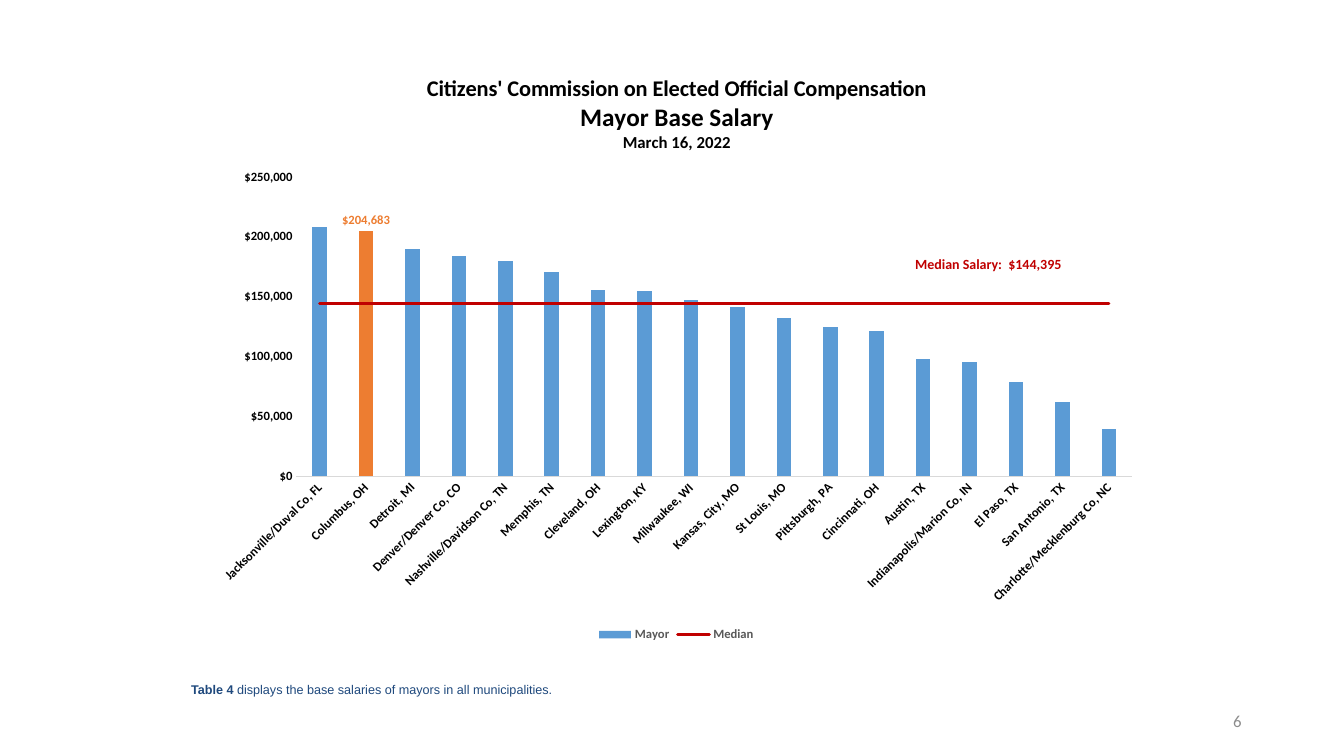
from lxml.etree import SubElement
from pptx import Presentation
from pptx.chart.data import CategoryChartData
from pptx.dml.color import RGBColor
from pptx.enum.chart import (XL_CHART_TYPE, XL_LABEL_POSITION, XL_LEGEND_POSITION,
                             XL_MARKER_STYLE, XL_TICK_MARK)
from pptx.enum.shapes import MSO_SHAPE
from pptx.enum.text import MSO_ANCHOR, PP_ALIGN
from pptx.oxml import parse_xml
from pptx.oxml.ns import nsdecls, qn
from pptx.util import Pt

SALARIES = {
    "Jacksonville/Duval Co, FL": 208393,
    "Columbus, OH": 204683,
    "Detroit, MI": 189300,
    "Denver/Denver Co, CO": 184165,
    "Nashville/Davidson Co, TN": 180000,
    "Memphis, TN": 170817,
    "Cleveland, OH": 155552,
    "Lexington, KY": 154785,
    "Milwaukee, WI": 147336,
    "Kansas, City, MO": 141455,
    "St Louis, MO": 131820,
    "Pittsburgh, PA": 124658,
    "Cincinnati, OH": 121291,
    "Austin, TX": 97656,
    "Indianapolis/Marion Co, IN": 95000,
    "El Paso, TX": 78750,
    "San Antonio, TX": 61725,
    "Charlotte/Mecklenburg Co, NC": 39646,
}
MEDIAN = 144000
HEADINGS = [("Citizens' Commission on Elected Official Compensation", 16),
            ("Mayor Base Salary", 18), ("March 16, 2022", 12)]
CHART_WIDTH, CHART_HEIGHT = 676.8, 423.4
DOLLARS = '"$"#,##0'
WHITE, BLACK, GREY, SILVER = "FFFFFF", "000000", "595959", "D9D9D9"
BLUE, ORANGE, RED, NAVY = "5B9BD5", "ED7D31", "C00000", "1F497D"


def rgb(value):
    return RGBColor.from_string(value)


def place(element, **lengths):
    for old in element.findall(qn("c:layout")):
        element.remove(old)
    layout = parse_xml(f'<c:layout {nsdecls("c")}><c:manualLayout/></c:layout>')
    manual = layout[0]
    if "w" in lengths:
        SubElement(manual, qn("c:layoutTarget")).set("val", "inner")
    for side in "xy":
        SubElement(manual, qn(f"c:{side}Mode")).set("val", "edge")
    for side, length in lengths.items():
        whole = CHART_WIDTH if side in "xw" else CHART_HEIGHT
        SubElement(manual, qn(f"c:{side}")).set("val", str(length / whole))
    return layout


class SalarySlide:
    face = "Calibri"

    def __init__(self, slide):
        self.slide = slide

    def style(self, font, size, color, bold=True, face=None):
        font.name = face or self.face
        font.size = Pt(size)
        font.bold = bold
        font.color.rgb = rgb(color)

    def page_number(self, number, left, top, width, height):
        frame = self.slide.shapes.add_textbox(
            Pt(left), Pt(top), Pt(width), Pt(height)).text_frame
        frame.word_wrap = True
        frame.vertical_anchor = MSO_ANCHOR.MIDDLE
        line = frame.paragraphs[0]
        line.text = number
        line.alignment = PP_ALIGN.RIGHT
        self.style(line.font, 12, "8C8C8C", False)

    def panel(self, parts, left, top, width, height, size, color, face=None, inset=None):
        panel = self.slide.shapes.add_shape(
            MSO_SHAPE.RECTANGLE, Pt(left), Pt(top), Pt(width), Pt(height))
        panel.shadow.inherit = False
        panel.fill.solid()
        panel.fill.fore_color.rgb = rgb(WHITE)
        panel.line.fill.background()
        frame = panel.text_frame
        frame.word_wrap = True
        frame.vertical_anchor = MSO_ANCHOR.TOP
        if inset is not None:
            frame.margin_left = frame.margin_right = Pt(inset)
            frame.margin_top = frame.margin_bottom = Pt(inset)
        line = frame.paragraphs[0]
        line.alignment = PP_ALIGN.LEFT
        self.style(line.font, size, color, parts[0][1], face)
        for words, bold in parts:
            run = line.add_run()
            run.text = words
            if bold != parts[0][1]:
                run.font.bold = bold

    def salary_chart(self, left, top):
        data = CategoryChartData(number_format=DOLLARS)
        data.categories = SALARIES
        data.add_series("Mayor", SALARIES.values())
        data.add_series("Median", [MEDIAN] * len(SALARIES))
        chart = self.slide.shapes.add_chart(
            XL_CHART_TYPE.COLUMN_CLUSTERED, Pt(left), Pt(top),
            Pt(CHART_WIDTH), Pt(CHART_HEIGHT), data).chart
        self.style(chart.font, 10, BLACK, False)
        self.headings(chart)
        self.axes(chart)
        self.bars(chart.plots[0])
        self.median_line(chart)
        chart.has_legend = True
        chart.legend.position = XL_LEGEND_POSITION.BOTTOM
        chart.legend.include_in_layout = False
        self.style(chart.legend.font, 9, GREY)
        plot_area = chart._chartSpace.chart.plotArea
        plot_area.insert(0, place(plot_area, x=67, y=88.3, w=597, h=214))

    def headings(self, chart):
        chart.has_title = True
        title = chart.chart_title
        frame = title.text_frame
        for index, (words, size) in enumerate(HEADINGS):
            line = frame.add_paragraph() if index else frame.paragraphs[0]
            line.text = words
            line.alignment = PP_ALIGN.CENTER
            self.style(line.font, size, BLACK)
        title.include_in_layout = False
        element = title._element
        element.find(qn("c:tx")).addnext(place(element, x=158.1, y=12.2))

    def axes(self, chart):
        cities, dollars = chart.category_axis, chart.value_axis
        for axis in (cities, dollars):
            axis.has_major_gridlines = False
            axis.major_tick_mark = axis.minor_tick_mark = XL_TICK_MARK.NONE
            self.style(axis.tick_labels.font, 9, BLACK)
        cities.format.line.color.rgb = rgb(SILVER)
        cities.format.line.width = Pt(0.75)
        cities._element.txPr.find(qn("a:bodyPr")).set("rot", "-2700000")
        dollars.format.line.fill.background()
        dollars.minimum_scale, dollars.maximum_scale = 0, 250000
        dollars.major_unit = 50000
        dollars.tick_labels.number_format = DOLLARS
        dollars.tick_labels.number_format_is_linked = False

    def bars(self, plot):
        plot.gap_width, plot.overlap = 219, -27
        plot.vary_by_categories = False
        mayor = plot.series[0]
        mayor.invert_if_negative = False
        columbus = mayor.points[list(SALARIES).index("Columbus, OH")]
        for bar, color in ((mayor, BLUE), (columbus, ORANGE)):
            bar.format.fill.solid()
            bar.format.fill.fore_color.rgb = rgb(color)
        self.style(columbus.data_label.font, 9, ORANGE)
        columbus.data_label.position = XL_LABEL_POSITION.OUTSIDE_END
        mayor.data_labels.show_value = False

    def median_line(self, chart):
        columns = chart.plots[0]._element
        series = columns.findall(qn("c:ser"))[1]
        for flag in series.findall(qn("c:invertIfNegative")):
            series.remove(flag)
        lines = parse_xml(f'<c:lineChart {nsdecls("c")}><c:grouping val="standard"/>'
                          '<c:varyColors val="0"/></c:lineChart>')
        lines.append(series)
        SubElement(lines, qn("c:marker")).set("val", "1")
        for axis in columns.findall(qn("c:axId")):
            SubElement(lines, qn("c:axId")).set("val", axis.get("val"))
        columns.addnext(lines)
        median = chart.plots[1].series[0]
        median.smooth = False
        median.marker.style = XL_MARKER_STYLE.NONE
        median.format.line.color.rgb = rgb(RED)
        median.format.line.width = Pt(2.25)
        median._element.find(qn("c:spPr")).find(qn("a:ln")).set("cap", "rnd")


def main():
    deck = Presentation()
    deck.slide_width, deck.slide_height = Pt(960), Pt(540)
    page = SalarySlide(deck.slides.add_slide(deck.slide_layouts[6]))
    page.page_number("6", 678, 500.5, 216, 28.75)
    page.panel([("Table 4 ", True),
                ("displays the base salaries of mayors in all municipalities.", False)],
               136.5, 487.4, 392.4, 13.7, 9, NAVY, "Arial", 0)
    page.salary_chart(144.7, 38)
    page.panel([("Median Salary:  $144,395", True)], 646.6, 179, 150.5, 18.7, 10, RED)
    deck.save("out.pptx")


if __name__ == "__main__":
    main()
